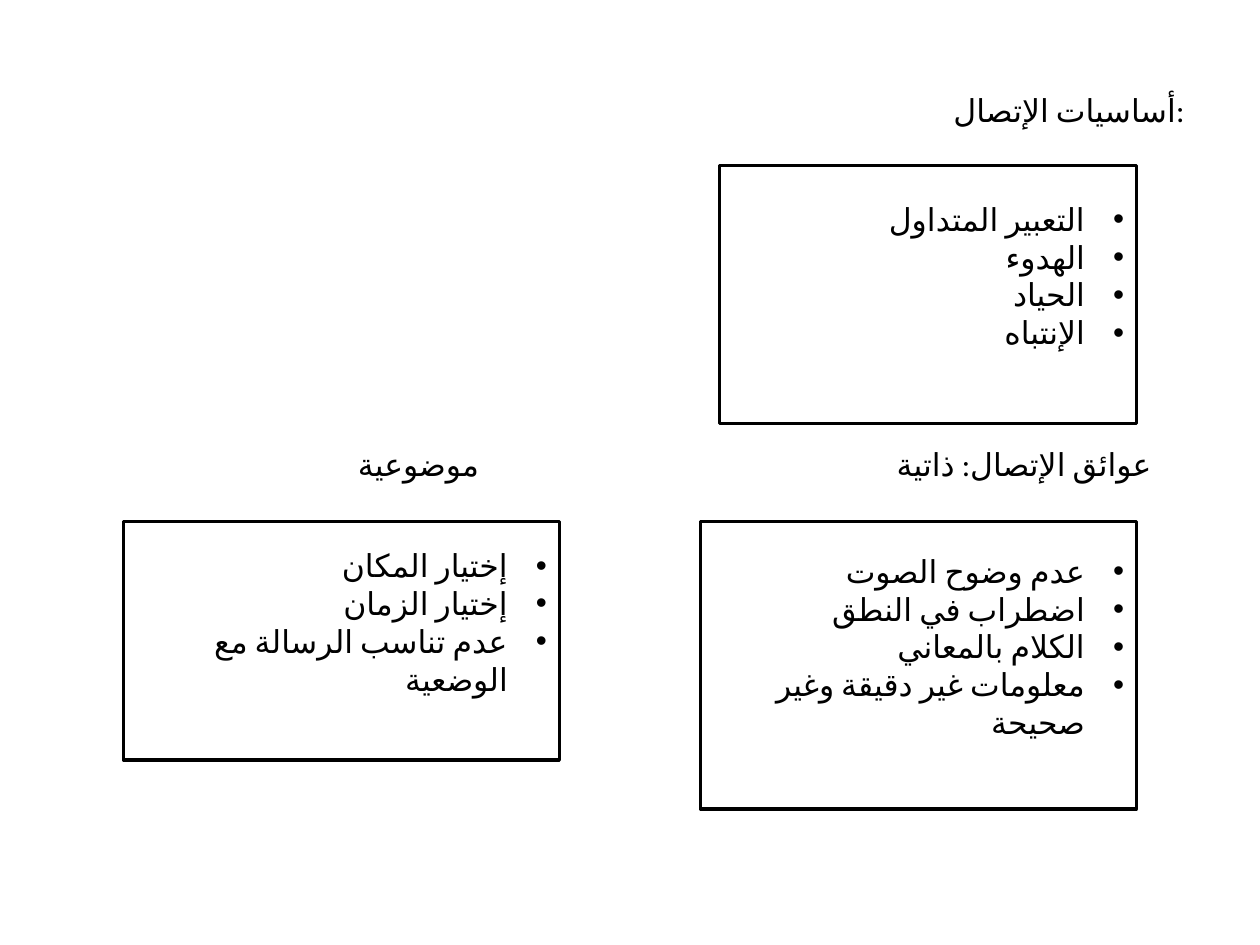
import dataclasses

import pptx
import pptx.dml.color
import pptx.enum.lang
import pptx.enum.shapes
import pptx.enum.text
import pptx.oxml
import pptx.oxml.ns
import pptx.util


@dataclasses.dataclass(frozen=True)
class Theme:
    font: str = "Calibri"
    size: int = 18
    ink: str = "000000"
    paper: str = "FFFFFF"
    line_width: float = 2
    hanging: float = 0.31
    text_line: float = 0.3


def color(value):
    return pptx.dml.color.RGBColor.from_string(value)


def write(paragraph, text, *, theme, rtl=True, bullet=False):
    """Put right-aligned Arabic text in a paragraph, optionally as a bullet."""
    paragraph.text = text
    paragraph.alignment = pptx.enum.text.PP_ALIGN.RIGHT
    properties = paragraph._p.get_or_add_pPr()
    properties.set("rtl", str(int(rtl)))
    namespace = pptx.oxml.ns.nsdecls("a")
    if bullet:
        hanging = pptx.util.Inches(theme.hanging)
        properties.set("marL", str(hanging))
        properties.set("indent", str(-hanging))
        for element in ('buFont typeface="Arial"', 'buChar char="•"'):
            properties.append(pptx.oxml.parse_xml(f"<a:{element} {namespace}/>"))
    run = paragraph.runs[0]
    font = run.font
    font.name = theme.font
    font.size = pptx.util.Pt(theme.size)
    font.color.rgb = color(theme.ink)
    font.language_id = pptx.enum.lang.MSO_LANGUAGE_ID.ARABIC_ALGERIA
    # Arabic letters take the complex-script typeface.
    run._r.get_or_add_rPr().append(
        pptx.oxml.parse_xml(f'<a:cs typeface="{theme.font}" {namespace}/>'))


class SlideBuilder:
    def __init__(self, presentation, theme):
        self.theme = theme
        self.width = presentation.slide_width
        self.height = presentation.slide_height
        self.slide = presentation.slides.add_slide(presentation.slide_layouts[6])

    def area(self, right, top, width, height):
        """Turn shares of the slide, measured from a right edge, into a position."""
        return (round((right - width) * self.width), round(top * self.height),
                round(width * self.width), round(height * self.height))

    def heading(self, text, right, top, rtl=True):
        box = self.slide.shapes.add_textbox(*self.area(right, top, 0.35, 0.055))
        box.text_frame.word_wrap = True
        write(box.text_frame.paragraphs[0], text, theme=self.theme, rtl=rtl)

    def bullet_box(self, items, right, top, width, height):
        shape = self.slide.shapes.add_shape(
            pptx.enum.shapes.MSO_SHAPE.RECTANGLE, *self.area(right, top, width, height))
        shape.shadow.inherit = False
        shape.fill.solid()
        shape.fill.fore_color.rgb = color(self.theme.paper)
        shape.line.color.rgb = color(self.theme.ink)
        shape.line.width = pptx.util.Pt(self.theme.line_width)
        frame = shape.text_frame
        frame.word_wrap = True
        frame.vertical_anchor = pptx.enum.text.MSO_ANCHOR.MIDDLE
        # The list sits half a line above the middle of its box.
        frame.margin_bottom = pptx.util.Inches(0.05 + self.theme.text_line)
        for index, item in enumerate(items):
            paragraph = frame.add_paragraph() if index else frame.paragraphs[0]
            write(paragraph, item, theme=self.theme, bullet=True)


def main():
    presentation = pptx.Presentation()
    presentation.slide_width = pptx.util.Inches(10)
    presentation.slide_height = pptx.util.Inches(7.5)
    builder = SlideBuilder(presentation, Theme())

    right_edge, left_edge = 0.902, 0.444
    obstacles_top, obstacles_width = 0.552, 0.346

    builder.heading("أساسيات الإتصال:", 0.95, 0.09, rtl=False)
    builder.bullet_box(
        ["التعبير المتداول", "الهدوء", "الحياد", "الإنتباه"],
        right_edge, 0.175, 0.331, 0.273)

    builder.heading("عوائق الإتصال: ذاتية", 0.924, 0.464)
    builder.bullet_box(
        ["عدم وضوح الصوت", "اضطراب في النطق", "الكلام بالمعاني",
         "معلومات غير دقيقة وغير صحيحة"],
        right_edge, obstacles_top, obstacles_width, 0.304)

    builder.heading("موضوعية", 0.39, 0.464)
    builder.bullet_box(
        ["إختيار المكان", "إختيار الزمان", "عدم تناسب الرسالة مع الوضعية"],
        left_edge, obstacles_top, obstacles_width, 0.252)

    presentation.save("out.pptx")


if __name__ == "__main__":
    main()
